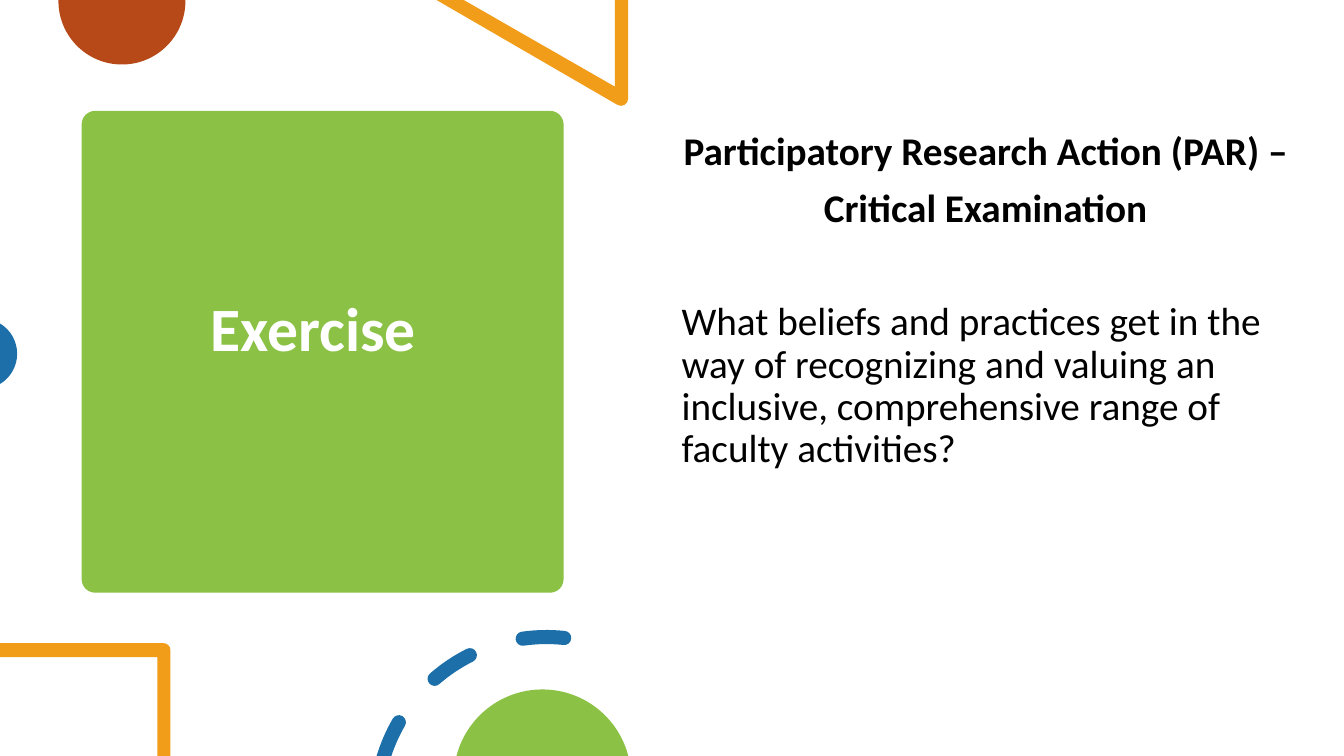
"""Build the Exercise slide: a green title card, a question and clipped ornaments."""
from itertools import chain
from math import asin, ceil, cos, degrees, radians, sin, tan

from lxml.etree import Element, SubElement
from pptx import Presentation
from pptx.dml.color import RGBColor
from pptx.enum.shapes import MSO_SHAPE
from pptx.enum.text import MSO_ANCHOR, MSO_AUTO_SIZE, PP_ALIGN
from pptx.oxml.ns import qn
from pptx.util import Inches, Pt

WIDTH, HEIGHT = 13.33, 7.5
GREEN, RUST, ORANGE, BLUE = "8BC145", "B74919", "F19D19", "1D6FA9"
BLACK, WHITE = "000000", "FFFFFF"
TITLE = "Exercise"
TITLE_AREA = (1.99, 1.81, 2.69, 2.96)
BODY_AREA = (6.66, 1.26, 6.23, 5.35)
CARD_AREA = (0.81, 1.1, 4.78, 4.78)
PARAGRAPHS = [
    ("Participatory Research Action (PAR) –", True, PP_ALIGN.CENTER, 10),
    ("Critical Examination", True, PP_ALIGN.CENTER, 10),
    ("What beliefs and practices get in the way of recognizing and valuing "
     "an inclusive, comprehensive range of faculty activities?",
     False, PP_ALIGN.LEFT, 50.75),
]
RING_CENTER, RING_RADIUS, HALF_STROKE = (5.42, 8.01), 1.69, 0.07
ROUND_DASHES = [(229, 243.3), (262, 276)]
CUT_DASH_END = 210


def color(value):
    return RGBColor.from_string(value)


def corners(*points):
    return [(point,) for point in points]


def arc(center, radius, start, end):
    """Return a start point followed by Bezier segments of at most a quarter turn."""
    count = ceil(abs(end - start) / 90)
    step = radians(end - start) / count
    handle = radius * 4 / 3 * tan(step / 4)

    def point(angle, offset):
        return (center[0] + radius * cos(angle) - offset * sin(angle),
                center[1] + radius * sin(angle) + offset * cos(angle))

    angles = [radians(start) + step * i for i in range(count + 1)]
    curves = [(point(a, handle), point(b, -handle), point(b, 0))
              for a, b in zip(angles, angles[1:])]
    return [(point(angles[0], 0),)] + curves


def ring_dash(start, end, cut=False):
    outer, inner = RING_RADIUS + HALF_STROKE, RING_RADIUS - HALF_STROKE

    def cap(angle, turn):
        center = (RING_CENTER[0] + RING_RADIUS * cos(radians(angle)),
                  RING_CENTER[1] + RING_RADIUS * sin(radians(angle)))
        return arc(center, HALF_STROKE, turn, turn + 180)[1:]

    def edge_angle(radius):
        return 180 + degrees(asin((RING_CENTER[1] - HEIGHT) / radius))

    outer_start, inner_start = (edge_angle(outer), edge_angle(inner)) if cut else (start, start)
    outline = arc(RING_CENTER, outer, outer_start, end) + cap(end, end)
    outline += arc(RING_CENTER, inner, end, inner_start)[1:]
    return outline if cut else outline + cap(start, start + 180)


def paint(shape, fill):
    shape.shadow.inherit = False
    shape.fill.solid()
    shape.fill.fore_color.rgb = color(fill)
    shape.line.fill.background()


def draw_outlines(slide, outlines, fill):
    paths = [[(Inches(x), Inches(y)) for x, y in chain(*outline)] for outline in outlines]
    builder = slide.shapes.build_freeform(*paths[0][0], scale=1.0)
    for index, points in enumerate(paths):
        if index:
            builder.move_to(*points[0])
        builder.add_line_segments(points[1:], close=True)
    shape = builder.convert_to_shape()
    paint(shape, fill)
    lines = iter(list(shape.element.iter(qn("a:lnTo"))))
    for segment in chain(*(outline[1:] for outline in outlines)):
        nodes = [next(lines) for _ in segment]
        if len(nodes) == 3:
            curve = Element(qn("a:cubicBezTo"))
            nodes[0].addprevious(curve)
            for node in nodes:
                curve.append(node[0])
                node.getparent().remove(node)


def place(shape, area):
    shape.left, shape.top, shape.width, shape.height = map(Inches, area)


def format_paragraph(para, size, bold, fill, align):
    para.font.name, para.font.size, para.font.bold = "Calibri", Pt(size), bold
    para.font.color.rgb = color(fill)
    para.alignment, para.line_spacing = align, 0.9


def add_title(slide):
    title = slide.shapes.title
    place(title, TITLE_AREA)
    frame = title.text_frame
    frame.text = TITLE
    frame.auto_size = MSO_AUTO_SIZE.NONE
    frame.vertical_anchor = MSO_ANCHOR.MIDDLE
    format_paragraph(frame.paragraphs[0], 44, True, WHITE, PP_ALIGN.LEFT)

    card = slide.shapes.add_shape(MSO_SHAPE.ROUNDED_RECTANGLE, *map(Inches, CARD_AREA))
    card.adjustments[0] = 0.028
    paint(card, GREEN)
    title.element.addprevious(card.element)


def add_body(slide):
    body = slide.placeholders[1]
    place(body, BODY_AREA)
    frame = body.text_frame
    frame.text = "\n".join(text for text, *style in PARAGRAPHS)
    frame.auto_size = MSO_AUTO_SIZE.NONE
    frame.vertical_anchor = MSO_ANCHOR.TOP
    for para, (text, bold, align, before) in zip(frame.paragraphs, PARAGRAPHS):
        format_paragraph(para, 28, bold, BLACK, align)
        para.space_before = Pt(before)
        properties = para._p.get_or_add_pPr()
        properties.set("marL", "0")
        properties.set("indent", "0")
        bullet = SubElement(properties, qn("a:buNone"))
        properties.find(qn("a:defRPr")).addprevious(bullet)


def add_ornaments(slide):
    triangle = corners((6.23, 0), (6.1, 0), (6.1, 0.86), (4.6, 0), (4.33, 0))
    triangle += arc((6.16, 0.98), HALF_STROKE, 120, 0)
    square = corners((1.69, HEIGHT), (1.56, HEIGHT), (1.56, 6.52), (0, 6.52), (0, 6.38))
    square += arc((1.62, 6.45), HALF_STROKE, -90, 0)
    dashes = [ring_dash(0, CUT_DASH_END, cut=True)]
    dashes += [ring_dash(start, end) for start, end in ROUND_DASHES]
    disc = corners((1.84, 0), (0.58, 0)) + arc((1.21, 0.01), 0.63, 180, 0)
    ornaments = [
        ([disc], RUST),
        ([triangle], ORANGE),
        ([arc((-0.18, 3.51), 0.35, -59, 59)], BLUE),
        ([square], ORANGE),
        (dashes, BLUE),
        ([arc((5.38, 7.72), 0.88, 194.5, 345.5)], GREEN),
    ]
    for outlines, fill in ornaments:
        draw_outlines(slide, outlines, fill)


def main():
    deck = Presentation()
    deck.slide_width, deck.slide_height = Inches(WIDTH), Inches(HEIGHT)
    slide = deck.slides.add_slide(deck.slide_layouts[1])
    add_title(slide)
    add_body(slide)
    add_ornaments(slide)
    deck.save("out.pptx")


if __name__ == "__main__":
    main()
